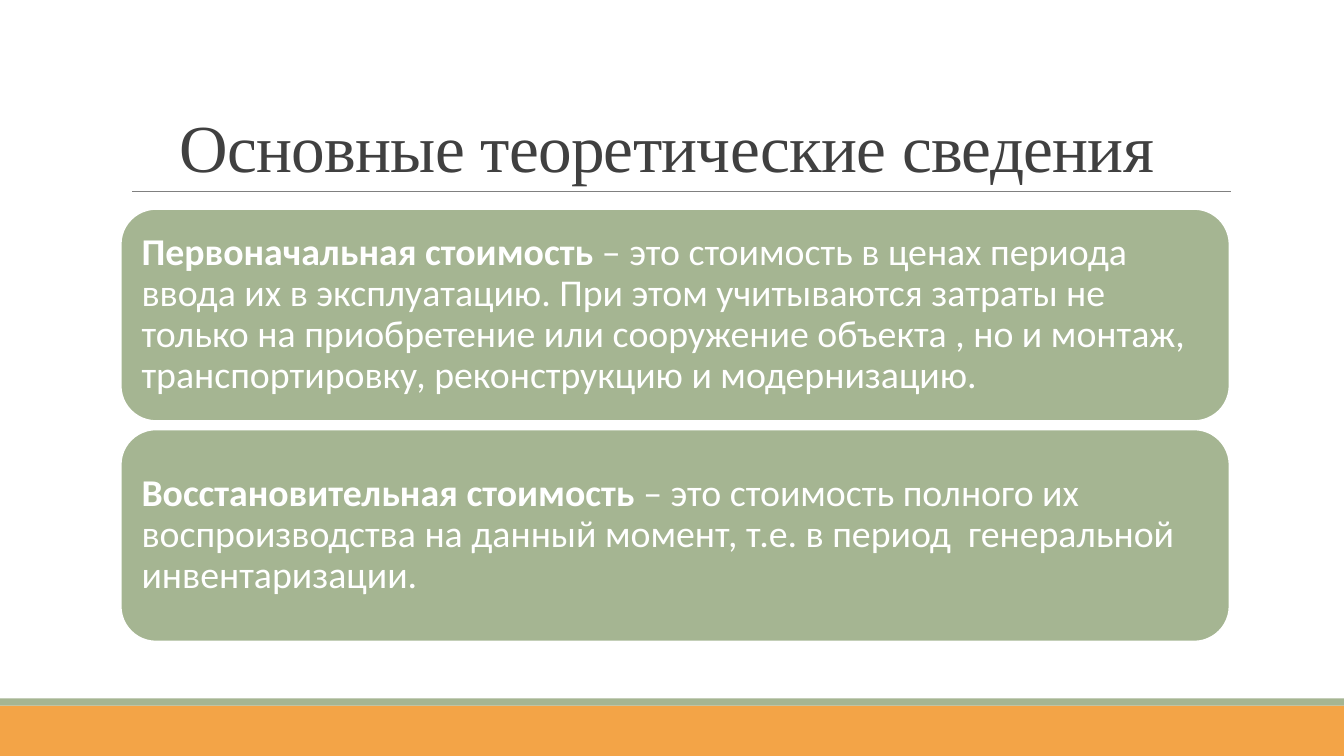
from dataclasses import dataclass

from lxml import etree
from pptx import Presentation
from pptx.dml.color import RGBColor
from pptx.enum.shapes import MSO_CONNECTOR, MSO_SHAPE
from pptx.enum.text import MSO_ANCHOR, MSO_AUTO_SIZE, PP_ALIGN
from pptx.oxml.ns import qn
from pptx.util import Pt

RECTANGLE = MSO_SHAPE.RECTANGLE
ROUNDED = MSO_SHAPE.ROUNDED_RECTANGLE
STRAIGHT = MSO_CONNECTOR.STRAIGHT
BOTTOM, MIDDLE = MSO_ANCHOR.BOTTOM, MSO_ANCHOR.MIDDLE
LEFT, CENTER = PP_ALIGN.LEFT, PP_ALIGN.CENTER
NO_AUTOFIT = MSO_AUTO_SIZE.NONE
TITLE_ONLY_LAYOUT = 5
EMU_PER_PX = 9525
SLIDE_WIDTH, SLIDE_HEIGHT = 1280, 720


@dataclass(frozen=True)
class Theme:
    orange: RGBColor = RGBColor.from_string("F3A447")
    green: RGBColor = RGBColor.from_string("A5B592")
    white: RGBColor = RGBColor.from_string("FFFFFF")
    rule: RGBColor = RGBColor.from_string("808080")
    title_color: RGBColor = RGBColor.from_string("404040")
    title_font: str = "Times New Roman"
    body_font: str = "Calibri"
    title_size: int = 48
    body_size: int = 27


THEME = Theme()
TITLE = "Основные теоретические сведения "
DEFINITIONS = [
    (
        "Первоначальная стоимость ",
        "– это стоимость в ценах периода ввода их в эксплуатацию. При этом "
        "учитываются затраты не только на приобретение или сооружение объекта , "
        "но и монтаж, транспортировку, реконструкцию и модернизацию.",
    ),
    (
        "Восстановительная стоимость ",
        "– это стоимость полного их воспроизводства на данный момент, т.е. "
        "в период  генеральной инвентаризации.",
    ),
]


def px(length):
    return length * EMU_PER_PX


def add_filled_shape(slide, kind, box, color):
    shape = slide.shapes.add_shape(kind, *map(px, box))
    shape.shadow.inherit = False
    shape.fill.solid()
    shape.fill.fore_color.rgb = color
    shape.line.fill.background()
    return shape


def format_run(run, font, size, color, bold=False):
    run.font.name = font
    run.font.size = Pt(size)
    run.font.color.rgb = color
    run.font.bold = bold


def add_footer_bands(slide, box):
    left, top, width, height = box
    stripe = 7
    add_filled_shape(slide, RECTANGLE, (left, top + stripe, width, height - stripe), THEME.orange)
    add_filled_shape(slide, RECTANGLE, (left, top, width, stripe), THEME.green)


def add_title(slide, box):
    left, top, width, height = box
    bottom = top + height
    rule = slide.shapes.add_connector(
        STRAIGHT, px(left + 11), px(bottom), px(left + width + 1), px(bottom)
    )
    rule.line.color.rgb = THEME.rule
    rule.line.width = Pt(0.5)
    etree.SubElement(rule._element.spPr, qn("a:effectLst"))

    title = slide.shapes.title
    title.left, title.top, title.width, title.height = map(px, box)
    text_frame = title.text_frame
    text_frame.text = TITLE
    text_frame.word_wrap = True
    text_frame.auto_size = NO_AUTOFIT
    text_frame.vertical_anchor = BOTTOM
    paragraph = text_frame.paragraphs[0]
    paragraph.alignment = CENTER
    paragraph.line_spacing = 0.85
    run = paragraph.runs[0]
    format_run(run, THEME.title_font, THEME.title_size, THEME.title_color)
    run._r.get_or_add_rPr().set("spc", "-50")


def add_definition_card(slide, box, term, meaning):
    card = add_filled_shape(slide, ROUNDED, box, THEME.green)
    card.line.color.rgb = THEME.white
    card.line.width = Pt(1.25)
    text_frame = card.text_frame
    text_frame.word_wrap = True
    text_frame.vertical_anchor = MIDDLE
    text_frame.margin_left = text_frame.margin_right = px(10)
    text_frame.margin_top = text_frame.margin_bottom = px(10)
    paragraph = text_frame.paragraphs[0]
    paragraph.alignment = LEFT
    paragraph.line_spacing = 0.9
    for text, bold in ((term, True), (meaning, False)):
        run = paragraph.add_run()
        run.text = text
        format_run(run, THEME.body_font, THEME.body_size, THEME.white, bold)


def add_definitions(slide, box):
    left, top, width, height = box
    gap = 8
    card_height = (height - gap * (len(DEFINITIONS) - 1)) // len(DEFINITIONS)
    for index, (term, meaning) in enumerate(DEFINITIONS):
        card_top = top + index * (card_height + gap)
        add_definition_card(slide, (left, card_top, width, card_height), term, meaning)


def main():
    presentation = Presentation()
    presentation.slide_width = px(SLIDE_WIDTH)
    presentation.slide_height = px(SLIDE_HEIGHT)
    slide = presentation.slides.add_slide(presentation.slide_layouts[TITLE_ONLY_LAYOUT])
    add_footer_bands(slide, (0, 665, SLIDE_WIDTH, 55))
    add_title(slide, (115, 30, 1056, 152))
    add_definitions(slide, (115, 199, 1056, 412))
    presentation.save("out.pptx")


if __name__ == "__main__":
    main()
